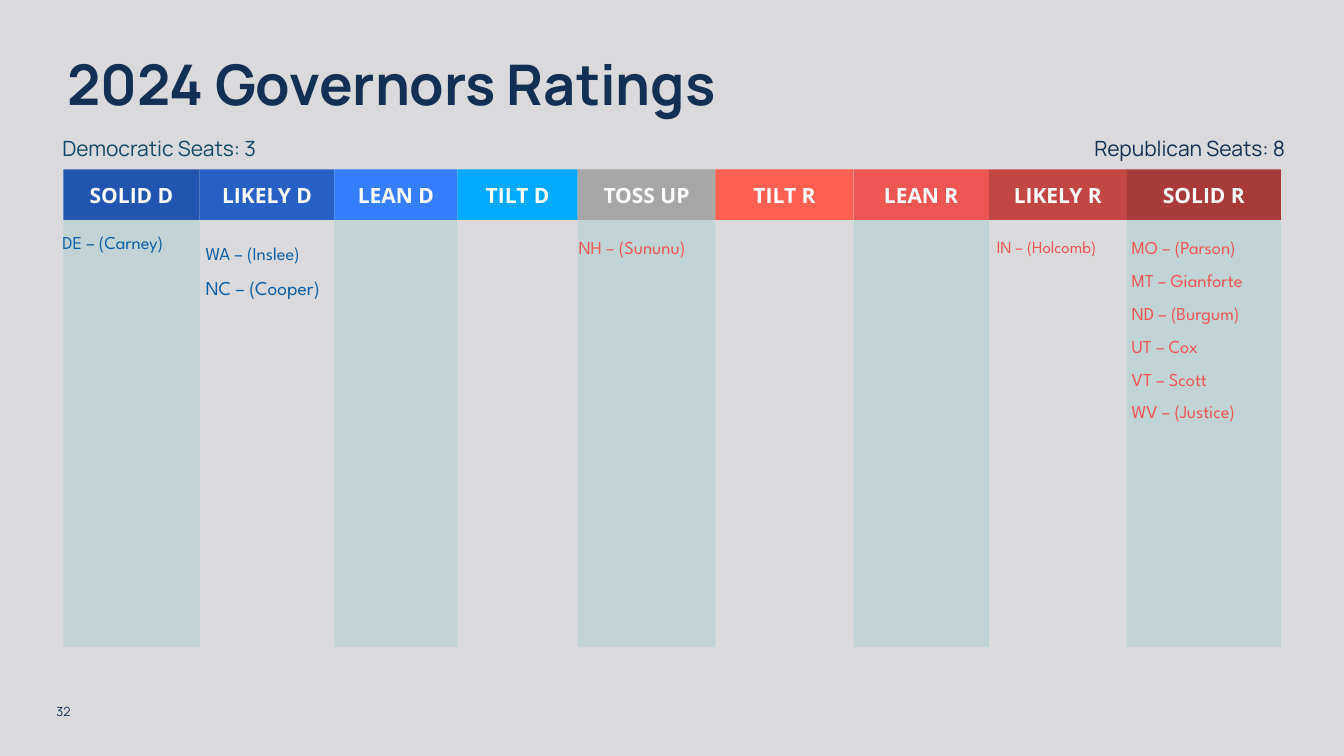
from dataclasses import dataclass
from lxml.etree import SubElement
from pptx import Presentation
from pptx.dml.color import RGBColor
from pptx.enum.shapes import MSO_SHAPE
from pptx.enum.text import MSO_ANCHOR, PP_ALIGN
from pptx.oxml.ns import qn
from pptx.util import Cm, Pt


@dataclass(frozen=True)
class Theme:
    """Colours, fonts and type sizes of the slide."""
    back: str = "DAD9DB"
    navy: str = "123054"
    teal: str = "104969"
    white: str = "FFFFFF"
    blue: str = "0B60A8"
    red: str = "EF5553"
    band: str = "36B1B0"
    alpha: int = 15
    main: str = "Manrope"
    head: str = "Open Sans"
    body: str = "League Spartan"
    title: int = 40
    label: int = 15
    large: int = 14
    entry: int = 13
    small: int = 12
    note: int = 9


class Board:
    """Draws styled elements on the current slide."""

    def __init__(self, theme, slide):
        """Keep the theme and slide, and paint the background."""
        self.theme, self.slide = theme, slide
        fill = slide.background.fill
        fill.solid()
        fill.fore_color.rgb = RGBColor.from_string(theme.back)

    def typeset(self, frame, lines, font, color, bold=False,
                align=PP_ALIGN.LEFT, space=1.0, inset=(0, 0),
                anchor=MSO_ANCHOR.TOP):
        """Fill a text frame with (text, size) lines."""
        frame.word_wrap = True
        frame.vertical_anchor = anchor
        frame.margin_left = frame.margin_right = Cm(inset[0])
        frame.margin_top = frame.margin_bottom = Cm(inset[1])
        for i, (text, size) in enumerate(lines):
            para = frame.add_paragraph() if i else frame.paragraphs[0]
            para.alignment = align
            para.line_spacing = space
            run = para.add_run()
            run.text = text
            run.font.name = font
            run.font.size = Pt(size)
            run.font.bold = bold
            run.font.color.rgb = RGBColor.from_string(color)

    def text(self, area, lines, font, color, **style):
        """Add a text box at left, top, width, height."""
        box = self.slide.shapes.add_textbox(*map(Cm, area))
        self.typeset(box.text_frame, lines, font, color, **style)

    def rect(self, area, color, alpha=None):
        """Add a plain rectangle, see-through if alpha is given."""
        shape = self.slide.shapes.add_shape(MSO_SHAPE.RECTANGLE, *map(Cm, area))
        shape.shadow.inherit = False
        shape.line.fill.background()
        shape.fill.solid()
        shape.fill.fore_color.rgb = RGBColor.from_string(color)
        if alpha is not None:
            tint = shape.element.spPr.find(".//" + qn("a:srgbClr"))
            SubElement(tint, qn("a:alpha")).set("val", str(alpha * 1000))
        return shape

    def header(self, area, label, color):
        """Add a column header with a centred label."""
        theme = self.theme
        shape = self.rect(area, color)
        self.typeset(shape.text_frame, [(label, theme.label)], theme.head,
                     theme.white, bold=True, align=PP_ALIGN.CENTER,
                     inset=(0.13, 0.13), anchor=MSO_ANCHOR.MIDDLE)

    def seats(self, left, label, color, align):
        """Add a seat total above the headers."""
        self.text((left, 3.48, 11.33, 0.53), [(label, self.theme.label)],
                  self.theme.main, color, align=align, space=0.9)

    def states(self, area, lines, color, space=1.5):
        """Add the list of states in one column."""
        self.text(area, lines, self.theme.body, color, space=space)


def main():
    """Build the ratings slide and save it."""
    deck = Presentation()
    deck.slide_width, deck.slide_height = Cm(33.87), Cm(19.05)
    theme = Theme()
    board = Board(theme, deck.slides.add_slide(deck.slide_layouts[6]))

    board.text((1.42, 17.35, 1.57, 0.76), [("32", theme.note)], theme.main,
               theme.navy, anchor=MSO_ANCHOR.BOTTOM)
    board.text((1.45, 1.3, 30.99, 1.88),
               [("2024 Governors Ratings", theme.title)], theme.main,
               theme.navy, bold=True, space=0.9, inset=(0.25, 0.13))

    ratings = [("SOLID D", "2255AF"), ("LIKELY D", "2861C5"),
               ("LEAN D", "357FFF"), ("TILT D", "02AAFF"),
               ("TOSS UP", "A6A6A6"), ("TILT R", "FF6051"),
               ("LEAN R", "EE5654"), ("LIKELY R", "C24644"),
               ("SOLID R", "A83B39")]
    edges = [1.6, 5.03, 8.43, 11.53, 14.56, 18.03, 21.51, 24.92, 28.4, 32.28]
    spans = [(left, right - left) for left, right in zip(edges, edges[1:])]
    for left, width in spans[::2]:
        board.rect((left, 5.53, width, 10.78), theme.band, theme.alpha)
    for (left, width), (label, color) in zip(spans, ratings):
        board.header((left, 4.27, width, 1.27), label, color)

    board.seats(1.57, "Democratic Seats: 3", theme.teal, PP_ALIGN.LEFT)
    board.seats(21.06, "Republican Seats: 8", theme.navy, PP_ALIGN.RIGHT)

    board.states((1.57, 5.82, 3.45, 0.61), [("DE – (Carney)", theme.entry)],
                 theme.blue, space=1.0)
    board.states((5.18, 5.82, 3.58, 0.61),
                 [("WA – (Inslee)", theme.entry),
                  ("NC – (Cooper)", theme.large)], theme.blue)
    board.states((14.58, 5.69, 3.38, 2.69), [("NH – (Sununu)", theme.entry)],
                 theme.red)
    board.states((25.12, 5.72, 3.91, 0.48), [("lN – (Holcomb)", theme.small)],
                 theme.red)
    solid = ["MO – (Parson)", "MT – Gianforte", "ND – (Burgum)",
             "UT – Cox", "VT – Scott", "WV – (Justice)"]
    board.states((28.52, 5.69, 3.61, 6.27),
                 [(state, theme.entry) for state in solid], theme.red)

    deck.save("out.pptx")


if __name__ == "__main__":
    main()
